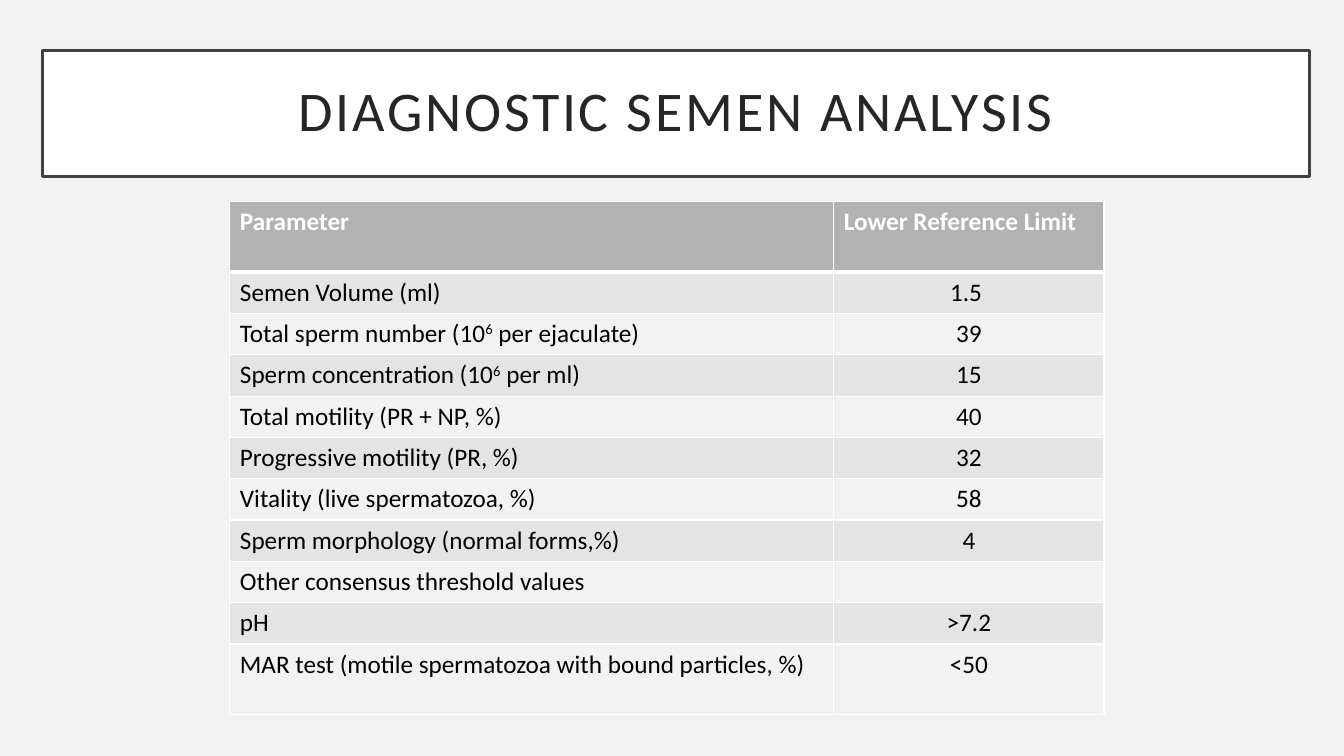
from lxml import etree
from pptx import Presentation
from pptx.dml.color import RGBColor
from pptx.enum import shapes, text
from pptx.oxml import ns
from pptx.util import Inches, Pt

BACKGROUND = RGBColor(0xF2, 0xF2, 0xF2)
WHITE = RGBColor(0xFF, 0xFF, 0xFF)
BLACK = RGBColor(0x00, 0x00, 0x00)
FRAME = RGBColor(0x40, 0x40, 0x40)
TITLE = RGBColor(0x26, 0x26, 0x26)
HEADER = RGBColor(0xB2, 0xB2, 0xB2)
BAND = RGBColor(0xE4, 0xE4, 0xE4)

# "^" marks the start and end of a superscript
ROWS = [
    ("Parameter", "Lower Reference Limit"),
    ("Semen Volume (ml)", "1.5 "),
    ("Total sperm number (10^6^ per ejaculate)", "39"),
    ("Sperm concentration (10^6^ per ml)", "15"),
    ("Total motility (PR + NP, %)", "40"),
    ("Progressive motility (PR, %)", "32"),
    ("Vitality (live spermatozoa, %)", "58"),
    ("Sperm morphology (normal forms,%)", "4"),
    ("Other consensus threshold values", ""),
    ("pH", ">7.2"),
    ("MAR test (motile spermatozoa with bound particles, %)", "<50"),
]


def write(tf, content, size=18, color=BLACK, bold=False, align=text.PP_ALIGN.LEFT, spacing=0):
    p = tf.paragraphs[0]
    p.alignment = align
    p.font.size = Pt(size)
    for i, part in enumerate(content.split("^")):
        if not part:
            continue
        r = p.add_run()
        r.text = part
        r.font.name = "Calibri"
        r.font.size = Pt(size)
        r.font.bold = bold
        r.font.color.rgb = color
        if spacing:
            r.font._element.set("spc", str(spacing * 100))
        if i % 2:
            r.font._element.set("baseline", "30000")
    return p


def add_border(cell, side, width):
    tcPr = cell._tc.get_or_add_tcPr()
    ln = etree.SubElement(tcPr, ns.qn("a:ln" + side), w=str(Pt(width)))
    fill = etree.SubElement(ln, ns.qn("a:solidFill"))
    etree.SubElement(fill, ns.qn("a:srgbClr"), val=str(WHITE))


prs = Presentation()
prs.slide_width, prs.slide_height = Inches(13.33), Inches(7.5)
s = prs.slides.add_slide(prs.slide_layouts[6])
s.background.fill.solid()
s.background.fill.fore_color.rgb = BACKGROUND

# Framed title
sp = s.shapes.add_shape(shapes.MSO_SHAPE.RECTANGLE,
                        Inches(0.42), Inches(0.5), Inches(12.57), Inches(1.25))
sp.shadow.inherit = False
sp.fill.solid()
sp.fill.fore_color.rgb = WHITE
sp.line.color.rgb = FRAME
sp.line.width = Pt(2.5)
tf = sp.text_frame
tf.word_wrap = True
tf.vertical_anchor = text.MSO_ANCHOR.MIDDLE
tf.margin_left = tf.margin_top = tf.margin_right = tf.margin_bottom = Inches(0.2)
p = write(tf, "DIAGNOSTIC SEMEN ANALYSIS", size=40, color=TITLE,
          align=text.PP_ALIGN.CENTER, spacing=2)
p.line_spacing = 0.9

# Table of reference limits
last = len(ROWS) - 1
table = s.shapes.add_table(len(ROWS), 2, Inches(2.28), Inches(2),
                           Inches(8.67), Inches(5.09)).table
table.columns[0].width, table.columns[1].width = Inches(5.99), Inches(2.68)

for i, row in enumerate(ROWS):
    table.rows[i].height = Inches(0.7 if i in (0, last) else 0.41)
    for j, content in enumerate(row):
        cell = table.cell(i, j)
        for side in "LRTB":
            under_header = (i, side) in ((0, "B"), (1, "T"))
            add_border(cell, side, 3 if under_header else 1)
        cell.fill.solid()
        cell.fill.fore_color.rgb = HEADER if i == 0 else BAND if i % 2 else BACKGROUND
        centred = i > 0 and j == 1
        write(cell.text_frame, content, color=BLACK if i else WHITE, bold=i == 0,
              align=text.PP_ALIGN.CENTER if centred else text.PP_ALIGN.LEFT)

prs.save("out.pptx")
